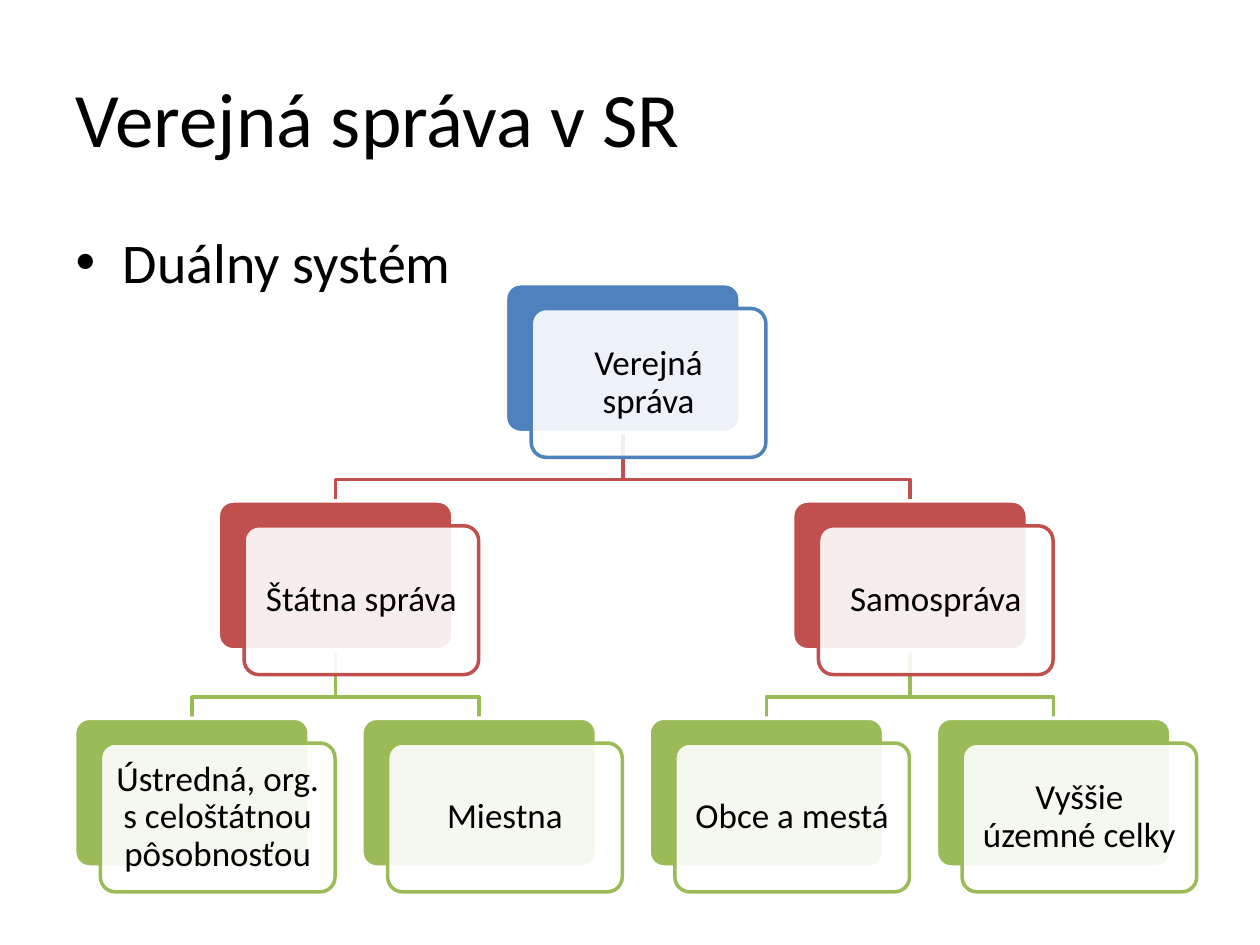
from lxml.etree import SubElement
from pptx import Presentation
from pptx.dml.color import RGBColor as RGB
from pptx.enum.shapes import MSO_SHAPE as Kind
from pptx.enum.text import MSO_ANCHOR as Anchor, PP_ALIGN as Align
from pptx.oxml.ns import qn
from pptx.util import Cm, Pt

# Content
TITLE = "Verejná správa v SR"
BULLET = "Duálny systém"
# Each node: text, level, column (in leaf slots), index of parent
NODES = [
    ("Verejná správa", 0, 1.5, None),
    ("Štátna správa", 1, 0.5, 0),
    ("Ústredná, org. s celoštátnou pôsobnosťou", 2, 0, 1),
    ("Miestna", 2, 1, 1),
    ("Samospráva", 1, 2.5, 0),
    ("Obce a mestá", 2, 2, 4),
    ("Vyššie územné celky", 2, 3, 4),
]

# Format
HUES = {"text": "000000", "card": "FFFFFF",
        0: "4F81BD", 1: "C0504D", 2: "9BBB59"}
FONT = "Calibri"
FRAME = {"margin_left": Cm(0.2), "margin_right": Cm(0.2),
         "margin_top": Cm(0.2), "margin_bottom": Cm(0.2),
         "word_wrap": True, "vertical_anchor": Anchor.MIDDLE}
PARA = {"alignment": Align.CENTER, "line_spacing": 0.9}

# Grid, in cm
LEFT, STEP = 3.87, 5.79     # centre of first column, column pitch
TOP, DROP = 5.72, 4.38      # top of first row, row pitch
WIDE, HIGH = 4.73, 3.0      # one card
SHIFT = (0.52, 0.5)         # front card against back card
BEND = 0.95                 # card foot to the bend of a branch


def hue(name):
    return RGB.from_string(HUES[name])


def put(obj, values):
    for name, value in values.items():
        setattr(obj, name, value)


def write(frame, text, size):
    para = frame.paragraphs[0]
    run = para.add_run()
    run.text = text
    put(run.font, {"name": FONT, "size": Pt(size)})
    run.font.color.rgb = hue("text")
    return para


def outline(shape, name):
    shape.shadow.inherit = False
    shape.line.color.rgb = hue(name)
    shape.line.width = Pt(2)


def spot(node):
    """Centre x and top y of a node's back card."""
    return LEFT + node[2] * STEP, TOP + node[1] * DROP


def branch(slide, node):
    x1, y1 = spot(NODES[node[3]])
    x2, y2 = spot(node)
    foot = y1 + HIGH
    bend = foot + BEND
    form = slide.shapes.build_freeform(Cm(x1), Cm(foot))
    form.add_line_segments([(Cm(x), Cm(y)) for x, y in
                            ((x1, bend), (x2, bend), (x2, y2))], close=False)
    shape = form.convert_to_shape()
    shape.fill.background()
    outline(shape, node[1])


def card(slide, x, y, fill, line):
    shape = slide.shapes.add_shape(Kind.ROUNDED_RECTANGLE, Cm(x), Cm(y),
                                   Cm(WIDE), Cm(HIGH))
    shape.adjustments[0] = 0.1
    shape.fill.solid()
    shape.fill.fore_color.rgb = hue(fill)
    outline(shape, line)
    return shape


def pair(slide, node):
    text, level = node[:2]
    mid, y = spot(node)
    x = mid - WIDE / 2
    card(slide, x, y, level, "card")
    front = card(slide, x + SHIFT[0], y + SHIFT[1], "card", level)
    tint = front._element.spPr.find(qn("a:solidFill"))[0]
    SubElement(tint, qn("a:alpha"), val="90000")
    put(front.text_frame, FRAME)
    put(write(front.text_frame, text, 20), PARA)


def main():
    deck = Presentation()
    put(deck, {"slide_width": Cm(25.4), "slide_height": Cm(19.05)})
    slide = deck.slides.add_slide(deck.slide_layouts[1])

    # Title and list
    title, body = slide.placeholders
    put(title, {"left": Cm(1.27), "top": Cm(0.76),
                "width": Cm(22.86), "height": Cm(3.18)})
    put(body, {"left": Cm(1.27), "top": Cm(4.45),
               "width": Cm(22.86), "height": Cm(12.57)})
    title.text_frame.vertical_anchor = Anchor.MIDDLE
    write(title.text_frame, TITLE, 44).alignment = Align.LEFT
    write(body.text_frame, BULLET, 32)

    # Tree: branches behind, cards in front
    for node in reversed(NODES):
        if node[3] is not None:
            branch(slide, node)
    for node in NODES:
        pair(slide, node)

    deck.save("out.pptx")


if __name__ == "__main__":
    main()
